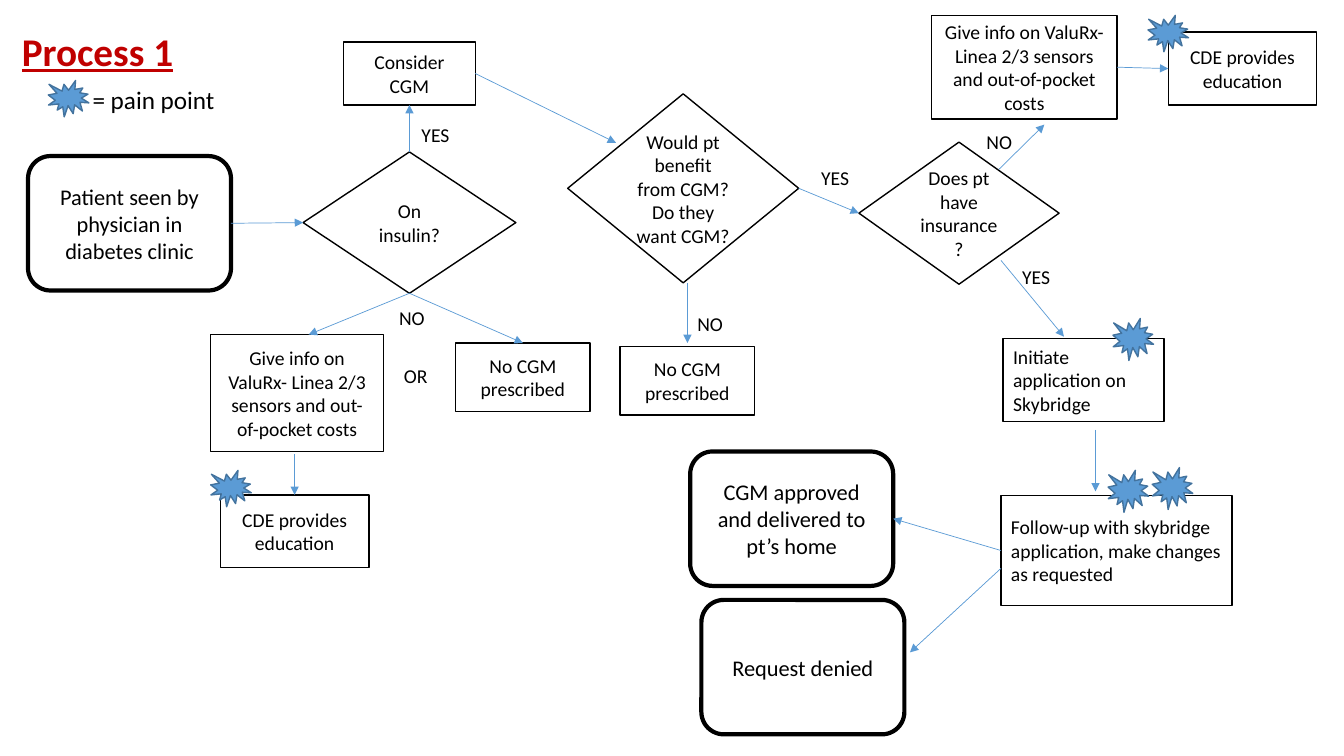
from lxml import etree
from pptx import Presentation
from pptx.dml.color import RGBColor
from pptx.enum.shapes import MSO_CONNECTOR as LINK, MSO_SHAPE as SHAPE
from pptx.enum.text import MSO_ANCHOR as ANCHOR, PP_ALIGN as ALIGN
from pptx.oxml.ns import qn
from pptx.util import Pt

COLOURS = {
    "paper": "FFFFFF",
    "ink": "000000",
    "title": "C00000",
    "accent": "5B9BD5",
    "accent_edge": "43739E",
}
FONT = "Calibri"
TOP, LEFT, BOTTOM, RIGHT = range(4)  # connection sites
INFO = "Give info on ValuRx- Linea 2/3 sensors and out-of-pocket costs"
EDUCATION = "CDE provides education"
NO_CGM = "No CGM prescribed"


def colour(name):
    return RGBColor.from_string(COLOURS[name])


def write(frame, text, align, size, ink="ink", **font_format):
    """Fill a text frame, one paragraph per line of text."""
    frame.word_wrap = True
    for number, line in enumerate(text.split("\n")):
        para = frame.paragraphs[0] if number == 0 else frame.add_paragraph()
        para.alignment = align
        span = para.add_run()
        span.text = line
        span.font.color.rgb = colour(ink)
        values = {"name": FONT, "size": Pt(size), **font_format}
        for name, value in values.items():
            setattr(span.font, name, value)


def add_outline(page, kind, place, fill, edge, weight):
    shape = page.shapes.add_shape(kind, *map(Pt, place))
    shape.shadow.inherit = False
    shape.fill.solid()
    shape.fill.fore_color.rgb = colour(fill)
    shape.line.color.rgb = colour(edge)
    shape.line.width = Pt(weight)
    return shape


def add_step(page, text, place, kind=SHAPE.RECTANGLE, align=ALIGN.CENTER,
             size=14, weight=1):
    box = add_outline(page, kind, place, "paper", "ink", weight)
    box.text_frame.vertical_anchor = ANCHOR.MIDDLE
    write(box.text_frame, text, align, size)
    return box


def add_decision(page, text, place):
    return add_step(page, text, place, SHAPE.DIAMOND)


def add_terminal(page, text, left, top):
    """Add a heavy rounded box for the start or an end of the process."""
    return add_step(page, text, (left, top, 145, 96),
                    SHAPE.ROUNDED_RECTANGLE, size=16, weight=3)


def add_pain_point(page, left, top, height=26):
    add_outline(page, SHAPE.EXPLOSION1, (left, top, 29, height),
                "accent", "accent_edge", 1)


def add_label(page, text, place, size=14, **text_format):
    box = page.shapes.add_textbox(*map(Pt, place))
    write(box.text_frame, text, ALIGN.LEFT, size, **text_format)


def add_arrow(page, start, end):
    """Join two ends, each an (x, y) point or a (box, site) pair."""
    free = [end_point if isinstance(end_point[0], (int, float)) else (0, 0)
            for end_point in (start, end)]
    arrow = page.shapes.add_connector(
        LINK.STRAIGHT, *(Pt(value) for point in free for value in point))
    for end_point, connect in ((start, arrow.begin_connect),
                               (end, arrow.end_connect)):
        if not isinstance(end_point[0], (int, float)):
            connect(*end_point)
    arrow.line.color.rgb = colour("accent")
    arrow.line.width = Pt(0.5)
    head = etree.SubElement(arrow.line._get_or_add_ln(), qn("a:tailEnd"))
    head.set("type", "triangle")
    etree.SubElement(arrow._element.spPr, qn("a:effectLst"))


def add_steps(page):
    return {
        "patient": add_terminal(
            page, "Patient seen by physician in diabetes clinic", 20, 111.5),
        "insulin": add_decision(page, "On insulin?", (216.5, 108.5, 152, 101)),
        "consider": add_step(page, "Consider CGM", (245.5, 30, 94, 45)),
        "info_left": add_step(page, INFO, (150.5, 239, 123.5, 83.5)),
        "cde_left": add_step(page, EDUCATION, (157.5, 353.5, 106, 52)),
        "no_insulin": add_step(page, NO_CGM, (325.5, 245, 96, 49)),
        "benefit": add_decision(
            page, "Would pt benefit from CGM?\nDo they want CGM?",
            (405.5, 67, 165, 135)),
        "no_benefit": add_step(page, NO_CGM, (443, 247.5, 96, 49)),
        "insurance": add_decision(
            page, "Does pt have insurance?", (613.5, 101.5, 143, 101.5)),
        "info_right": add_step(page, INFO, (665.5, 11, 132.5, 74)),
        "cde_right": add_step(page, EDUCATION, (834.5, 23, 106, 52)),
        "initiate": add_step(
            page, "Initiate application on Skybridge",
            (716.5, 242, 115, 59), align=ALIGN.LEFT),
        "follow_up": add_step(
            page,
            "Follow-up with skybridge application, make changes as requested",
            (715, 354, 165, 78.5), align=ALIGN.LEFT),
        "approved": add_terminal(
            page, "CGM approved and delivered to pt’s home", 493, 322.5),
        "denied": add_terminal(page, "Request denied", 501, 428.5),
    }


def add_arrows(page, steps):
    arrows = [
        (("patient", RIGHT), ("insulin", LEFT)),
        (("insulin", TOP), ("consider", BOTTOM)),
        (("insulin", BOTTOM), ("no_insulin", TOP)),
        (("insulin", BOTTOM), (220.5, 239)),
        ((210.5, 324.5), ("cde_left", TOP)),
        (("consider", RIGHT), (440, 102)),
        (("benefit", RIGHT), ("insurance", LEFT)),
        ((491, 202), (491, 245)),
        ((713.5, 121), (746, 89)),
        (("info_right", RIGHT), ("cde_right", LEFT)),
        ((715, 186), (760, 240.5)),
        ((782.5, 307), (782.5, 351)),
        (("follow_up", LEFT), ("approved", RIGHT)),
        ((715, 406), (650, 466)),
    ]
    for ends in arrows:
        add_arrow(page, *((steps.get(first, first), second)
                          for first, second in ends))


def main():
    deck = Presentation()
    deck.slide_width, deck.slide_height = Pt(960), Pt(540)
    page = deck.slides.add_slide(deck.slide_layouts[6])

    add_label(page, "Process 1", (8.5, 16, 206, 41), 28, ink="title",
              bold=True, underline=True)
    add_label(page, "= pain point", (59, 57, 110, 29), 18)

    add_arrows(page, add_steps(page))

    answers = [
        ("YES", 294, 84), ("YES", 723, 186), ("YES", 579.5, 115),
        ("NO", 278, 215), ("NO", 697.5, 89), ("NO", 491, 219),
        ("OR", 281.5, 256.5),
    ]
    for text, left, top in answers:
        add_label(page, text, (left, top, 47, 24.5))

    for pain_point in [(34.5, 57.5), (820, 11), (150.5, 336),
                       (795, 227.5, 30), (791.5, 336, 30), (823, 334, 30)]:
        add_pain_point(page, *pain_point)

    deck.save("out.pptx")


if __name__ == "__main__":
    main()
